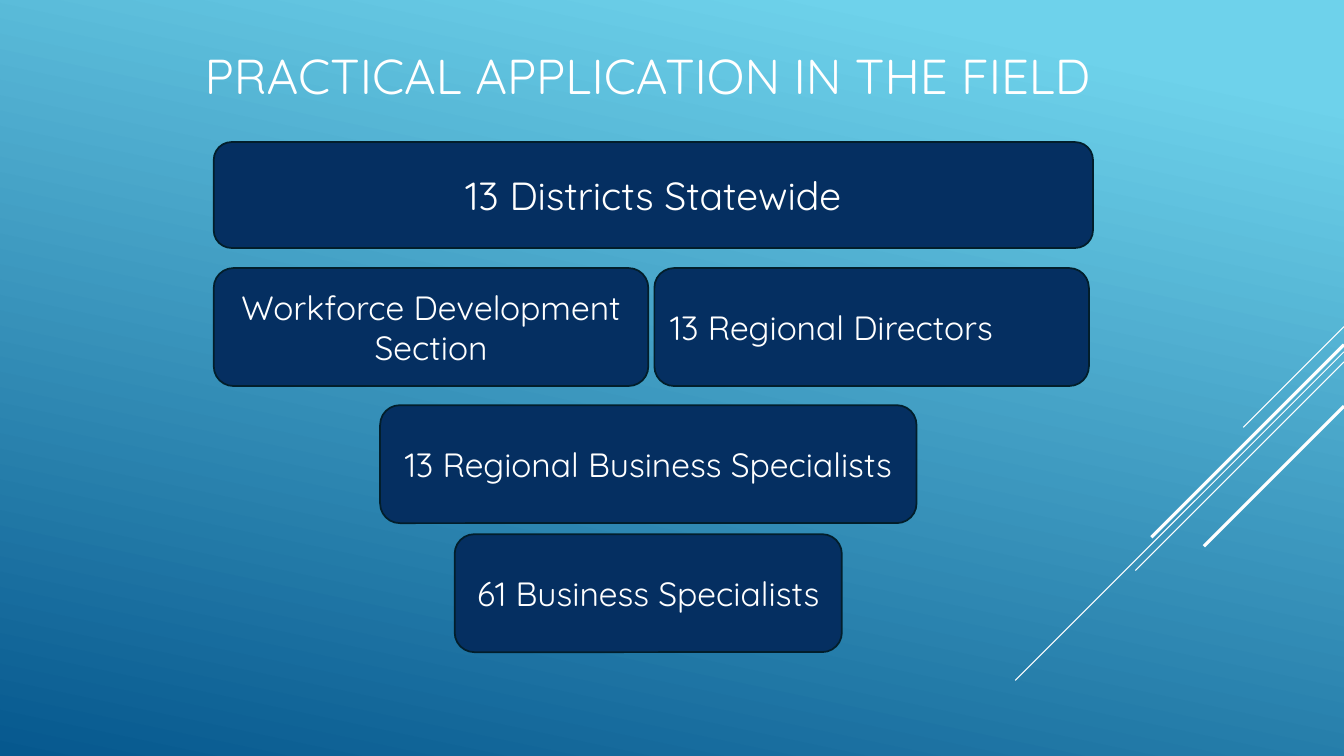
from pptx import Presentation
from pptx import util as u
from pptx.dml.color import RGBColor
from pptx.enum import shapes, text
from pptx.oxml.ns import qn

WIDTH, HEIGHT = 13.33, 7.5
AXIS = 6.43
LEFT = 2.12
FONT = "Quicksand"
COLORS = {"sky": "6ED2EB", "deep": "06588E", "navy": "052F61",
          "edge": "021E2B", "white": "FFFFFF"}
ALIGN = text.PP_ALIGN

# Start height on the right edge, run towards the lower left, weight
RAYS = [(3.24, 1.0, 0.75), (3.49, 3.26, 0.75), (3.59, 2.07, 0.75),
        (3.42, 1.91, 2.25), (4.03, 1.39, 2.25)]


def color(name):
    return RGBColor.from_string(COLORS[name])


def inches(*lengths):
    return [u.Inches(length) for length in lengths]


def set_all(target, values):
    for name, value in values.items():
        setattr(target, name, value)


def paint_background(s):
    fill = s.background.fill
    fill.gradient()
    fill.gradient_angle = 258
    for stop, (name, position) in zip(fill.gradient_stops,
                                      [("sky", 0.1), ("deep", 1.0)]):
        stop.color.rgb = color(name)
        stop.position = position


def add_ray(s, top, run, weight):
    """Draw a 45 degree line inwards from the right edge."""
    ray = s.shapes.add_connector(shapes.MSO_CONNECTOR.STRAIGHT,
                                 *inches(WIDTH, top, WIDTH - run, top + run))
    ray.line.color.rgb = color("white")
    ray.line.width = u.Pt(weight)
    sp_pr = ray._element.spPr
    sp_pr.append(sp_pr.makeelement(qn("a:effectLst"), {}))


def write(sp, wording, size, align=ALIGN.CENTER, spacing=1.0):
    tf = sp.text_frame
    set_all(tf, {"word_wrap": True, "auto_size": text.MSO_AUTO_SIZE.NONE,
                 "vertical_anchor": text.MSO_ANCHOR.MIDDLE})
    p = tf.paragraphs[0]
    set_all(p, {"alignment": align, "line_spacing": spacing})
    r = p.add_run()
    r.text = wording
    set_all(r.font, {"name": FONT, "size": u.Pt(size)})
    r.font.color.rgb = color("white")


def add_title(s, wording):
    title = s.shapes.title
    left, top, width, height = inches(0.43, 0.16, 11.99, 1.25)
    set_all(title, {"left": left, "top": top, "width": width, "height": height})
    write(title, wording, 35, spacing=0.9)


def add_box(s, wording, left, top, width, height=1.17, size=24,
            align=ALIGN.CENTER):
    sp = s.shapes.add_shape(shapes.MSO_SHAPE.ROUNDED_RECTANGLE,
                            *inches(left, top, width, height))
    sp.shadow.inherit = False
    sp.fill.solid()
    sp.fill.fore_color.rgb = color("navy")
    sp.line.color.rgb = color("edge")
    sp.line.width = u.Pt(1.25)
    write(sp, wording, size, align)


def add_centered_box(s, wording, top, width):
    add_box(s, wording, AXIS - width / 2, top, width)


def main():
    prs = Presentation()
    prs.slide_width, prs.slide_height = inches(WIDTH, HEIGHT)
    s = prs.slides.add_slide(prs.slide_layouts[5])
    paint_background(s)
    for ray in RAYS:
        add_ray(s, *ray)
    add_title(s, "PRACTICAL APPLICATION IN THE FIELD")

    half, gap = 4.31, 0.06
    add_box(s, "13 Districts Statewide", LEFT, 1.41, 8.72, 1.05, 28)
    add_box(s, "Workforce Development Section", LEFT, 2.66, half)
    add_box(s, "13 Regional Directors", LEFT + half + gap, 2.66, half,
            align=ALIGN.LEFT)
    add_centered_box(s, "13 Regional Business Specialists", 4.02, 5.32)
    add_centered_box(s, "61 Business Specialists", 5.3, 3.84)
    prs.save("out.pptx")


if __name__ == "__main__":
    main()
